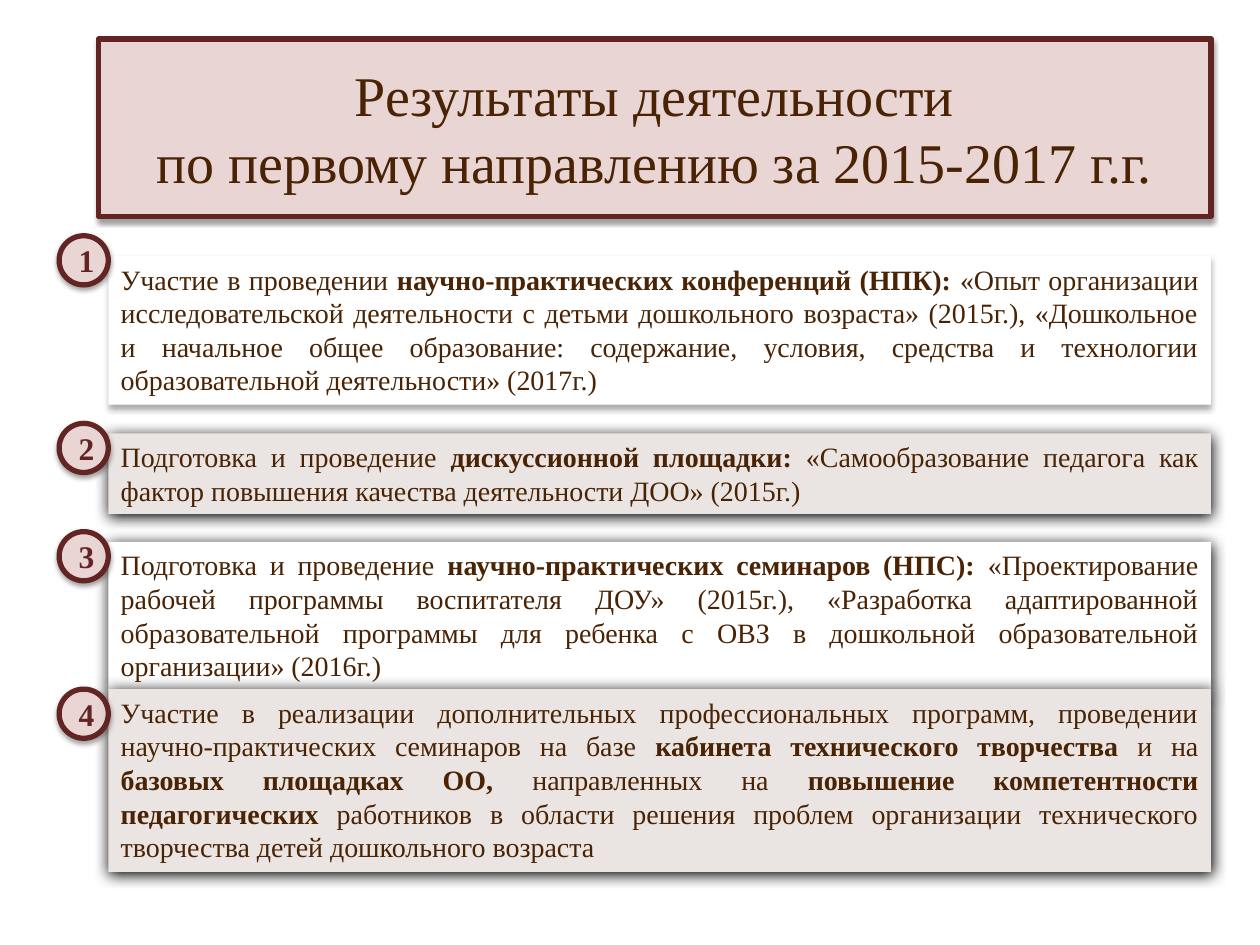
"""Build a slide listing four numbered results under a framed title."""
from typing import NamedTuple

from lxml.etree import SubElement
from pptx import Presentation
from pptx.dml.color import RGBColor
from pptx.enum.shapes import MSO_SHAPE
from pptx.enum.text import MSO_ANCHOR, MSO_AUTO_SIZE, PP_ALIGN
from pptx.oxml.ns import qn
from pptx.util import Pt


class Theme(NamedTuple):
    font: str = "Times New Roman"
    ink: str = "492303"
    accent: str = "632523"
    blush: str = "F2DCDB"
    white: str = "FFFFFF"
    sand: str = "EAE5E2"
    shadow: str = "000000"
    title_size: float = 32
    body_size: float = 16
    badge_size: float = 18
    border: float = 3
    opacity: int = 88


class Shadow(NamedTuple):
    opacity: int
    blur: float
    distance: float


class Box(NamedTuple):
    left: float
    top: float
    width: float
    height: float


class Span(NamedTuple):
    text: str
    bold: bool = False


class Item(NamedTuple):
    top: float
    height: float
    badge_rise: float
    fill: str
    shadow: Shadow
    spans: list[Span]


THEME = Theme()
FRAME_SHADOW = Shadow(38, 3.1, 1.6)
SOFT_SHADOW = Shadow(32, 3.5, 2.2)
DEEP_SHADOW = Shadow(100, 8.5, 1)
TITLE_BOX = Box(56.2, 22.3, 635.8, 101.5)
TITLE_LINES = ["Результаты деятельности", "по первому направлению за 2015-2017 г.г."]
TITLE_OUTDENT = 16
ITEM_LEFT, ITEM_WIDTH = 61.9, 630
BADGE_LEFT, BADGE_SIDE = 33.8, 28.1

ITEMS = [
    Item(146.2, 85, 11.5, THEME.white, SOFT_SHADOW, [
        Span("Участие в проведении "),
        Span("научно-практических конференций (НПК): ", True),
        Span("«Опыт организации исследовательской деятельности с детьми "
             "дошкольного возраста» (2015г.), «Дошкольное и начальное общее "
             "образование: содержание, условия, средства и технологии "
             "образовательной деятельности» (2017г.)"),
    ]),
    Item(247.7, 46, 5.8, THEME.sand, DEEP_SHADOW, [
        Span("Подготовка и проведение "),
        Span("дискуссионной площадки: ", True),
        Span("«Самообразование педагога как фактор повышения качества "
             "деятельности ДОО» (2015г.)"),
    ]),
    Item(309.6, 85, 5.8, THEME.white, DEEP_SHADOW, [
        Span("Подготовка и проведение "),
        Span("научно-практических семинаров (НПС): ", True),
        Span("«Проектирование рабочей программы воспитателя ДОУ» (2015г.), "
             "«Разработка адаптированной образовательной программы для ребенка "
             "с ОВЗ в дошкольной образовательной организации» (2016г.)"),
    ]),
    Item(393.8, 104.4, 0, THEME.sand, DEEP_SHADOW, [
        Span("Участие в реализации дополнительных профессиональных программ, "
             "проведении научно-практических семинаров на базе "),
        Span("кабинета технического творчества ", True),
        Span("и на "),
        Span("базовых площадках ОО, ", True),
        Span("направленных на "),
        Span("повышение компетентности педагогических ", True),
        Span("работников в области решения проблем организации технического "
             "творчества детей дошкольного возраста"),
    ]),
]


def add_alpha(color, percent: int) -> None:
    SubElement(color, qn("a:alpha"), val=str(percent * 1000))


def set_shadow(sp, shadow: Shadow) -> None:
    sp.shadow.inherit = False
    effects = sp._element.spPr.find(qn("a:effectLst"))
    outer = SubElement(effects, qn("a:outerShdw"), blurRad=str(Pt(shadow.blur)),
                       dist=str(Pt(shadow.distance)), dir="5400000",
                       algn="ctr", rotWithShape="0")
    add_alpha(SubElement(outer, qn("a:srgbClr"), val=THEME.shadow), shadow.opacity)


def add_panel(s, kind: MSO_SHAPE, box: Box, fill: str, shadow: Shadow):
    sp = s.shapes.add_shape(kind, *(Pt(v) for v in box))
    sp.fill.solid()
    sp.fill.fore_color.rgb = RGBColor.from_string(fill)
    sp.line.fill.background()
    set_shadow(sp, shadow)
    sp.text_frame.word_wrap = True
    return sp


def add_framed(s, kind: MSO_SHAPE, box: Box):
    sp = add_panel(s, kind, box, THEME.blush, FRAME_SHADOW)
    add_alpha(sp._element.spPr.find(qn("a:solidFill"))[0], THEME.opacity)
    sp.line.color.rgb = RGBColor.from_string(THEME.accent)
    sp.line.width = Pt(THEME.border)
    sp.text_frame.vertical_anchor = MSO_ANCHOR.MIDDLE
    return sp


def write(p, spans: list[Span], size: float, color: str, align: PP_ALIGN) -> None:
    p.alignment = align
    for span in spans:
        r = p.add_run()
        r.text = span.text
        r.font.name = THEME.font
        r.font.size = Pt(size)
        r.font.bold = span.bold
        r.font.color.rgb = RGBColor.from_string(color)


def add_title(s) -> None:
    tf = add_framed(s, MSO_SHAPE.RECTANGLE, TITLE_BOX).text_frame
    first, second = tf.paragraphs[0], tf.add_paragraph()
    for p, line in zip((first, second), TITLE_LINES):
        write(p, [Span(line)], THEME.title_size, THEME.ink, PP_ALIGN.CENTER)
    pPr = second._p.get_or_add_pPr()
    pPr.set("marL", "0")
    pPr.set("indent", str(-Pt(TITLE_OUTDENT)))


def add_item(s, item: Item) -> None:
    box = Box(ITEM_LEFT, item.top, ITEM_WIDTH, item.height)
    tf = add_panel(s, MSO_SHAPE.RECTANGLE, box, item.fill, item.shadow).text_frame
    tf.auto_size = MSO_AUTO_SIZE.SHAPE_TO_FIT_TEXT
    tf.vertical_anchor = MSO_ANCHOR.TOP
    write(tf.paragraphs[0], item.spans, THEME.body_size, THEME.ink, PP_ALIGN.JUSTIFY)


def add_badge(s, number: int, item: Item) -> None:
    box = Box(BADGE_LEFT, item.top - item.badge_rise, BADGE_SIDE, BADGE_SIDE)
    sp = add_framed(s, MSO_SHAPE.OVAL, box)
    write(sp.text_frame.paragraphs[0], [Span(str(number), True)],
          THEME.badge_size, THEME.accent, PP_ALIGN.CENTER)


def main() -> None:
    prs = Presentation()
    prs.slide_width, prs.slide_height = Pt(720), Pt(540)
    s = prs.slides.add_slide(prs.slide_layouts[6])
    add_title(s)
    for item in ITEMS:
        add_item(s, item)
    for number, item in enumerate(ITEMS, 1):
        add_badge(s, number, item)
    prs.save("out.pptx")


if __name__ == "__main__":
    main()
